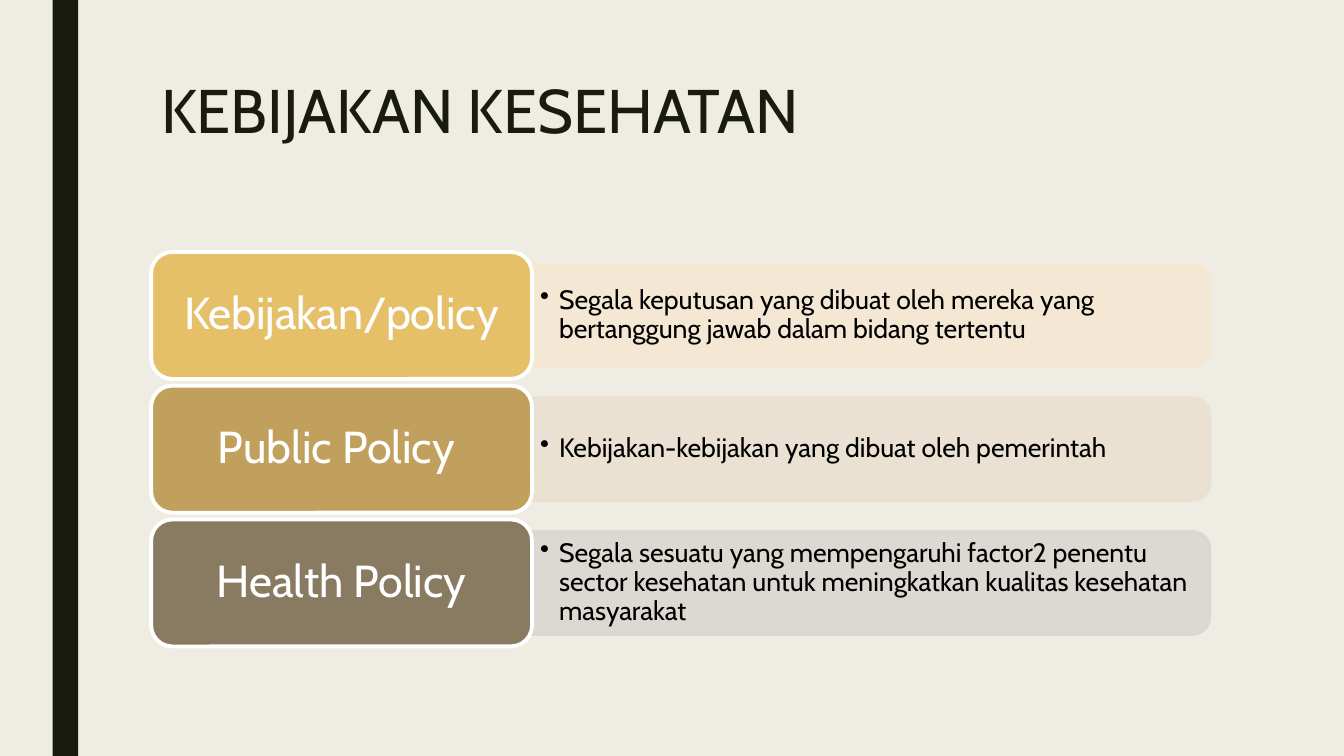
import pptx
import pptx.util
import pptx.dml.color
import pptx.enum.shapes
import pptx.enum.text
import pptx.oxml.ns
from lxml import etree
from pptx.util import Cm

TITLE = "KEBIJAKAN KESEHATAN"
# label, explanation, label colour, bar colour
POLICIES = [
    ("Kebijakan/policy",
     "Segala keputusan yang dibuat oleh mereka yang bertanggung jawab dalam bidang tertentu",
     "E6C069", "F5E8D4"),
    ("Public Policy ",
     "Kebijakan-kebijakan yang dibuat oleh pemerintah",
     "C0A05C", "EAE0D1"),
    ("Health Policy",
     "Segala sesuatu yang mempengaruhi factor2 penentu sector kesehatan "
     "untuk meningkatkan kualitas kesehatan masyarakat",
     "897B61", "DAD7D2"),
]
FONT = "Cabin"
DARK, PAPER, WHITE, BLACK = "191B0E", "EFEDE3", "FFFFFF", "000000"

LEFT, TOP, PITCH = Cm(3.81), Cm(6.35), Cm(3.37)
LABEL_WIDTH, LABEL_HEIGHT = Cm(9.6), Cm(3.2)
BAR_LENGTH, BAR_DEPTH = Cm(17.07), Cm(2.57)
NOTE_WIDTH, NOTE_HEIGHT = Cm(16.94), Cm(2.31)

SHAPES = pptx.enum.shapes.MSO_SHAPE
ALIGN = pptx.enum.text.PP_ALIGN
ANCHOR = pptx.enum.text.MSO_ANCHOR


def colour(code):
    return pptx.dml.color.RGBColor.from_string(code)


def add_child(parent, tag, **attributes):
    child = etree.SubElement(parent, pptx.oxml.ns.qn(tag))
    for name, value in attributes.items():
        child.set(name, value)


def write(shape, text, size, ink, align=ALIGN.LEFT, anchor=ANCHOR.MIDDLE,
          inset=(Cm(0.25), Cm(0.13)), bullet=False):
    frame = shape.text_frame
    frame.word_wrap = True
    frame.auto_size = pptx.enum.text.MSO_AUTO_SIZE.NONE
    frame.vertical_anchor = anchor
    frame.margin_left = frame.margin_right = inset[0]
    frame.margin_top = frame.margin_bottom = inset[1]
    para = frame.paragraphs[0]
    para.alignment = align
    para.line_spacing = 0.9
    span = para.add_run()
    span.text = text
    span.font.name = FONT
    span.font.size = pptx.util.Pt(size)
    span.font.color.rgb = colour(ink)
    if bullet:
        properties = para._p.get_or_add_pPr()
        properties.set("marL", str(Cm(0.48)))
        properties.set("indent", str(-Cm(0.48)))
        add_child(properties, "a:buChar", char="•")


def add_block(page, kind, box, fill, line=None, opacity=None):
    """Add a filled shape; box is left, top, width, height, opacity a percentage."""
    shape = page.shapes.add_shape(kind, *box)
    shape.shadow.inherit = False
    shape.fill.solid()
    shape.fill.fore_color.rgb = colour(fill)
    if line:
        shape.line.color.rgb = colour(line)
        shape.line.width = pptx.util.Pt(2.75)
    else:
        shape.line.fill.background()
    if opacity:
        for shade in shape._element.spPr.iter(pptx.oxml.ns.qn("a:srgbClr")):
            add_child(shade, "a:alpha", val=str(opacity * 1000))
    return shape


def add_policy(page, top, label, note, label_fill, bar_fill):
    middle = top + LABEL_HEIGHT // 2
    right = LEFT + LABEL_WIDTH
    # The bar stands upright before its quarter turn, around the same centre.
    bar = add_block(page, SHAPES.ROUND_2_SAME_RECTANGLE,
                    (right + (BAR_LENGTH - BAR_DEPTH) // 2, middle - BAR_LENGTH // 2,
                     BAR_DEPTH, BAR_LENGTH),
                    bar_fill, line=bar_fill, opacity=90)
    bar.rotation = 90
    box = page.shapes.add_textbox(right, middle - NOTE_HEIGHT // 2, NOTE_WIDTH, NOTE_HEIGHT)
    write(box, note, 19, BLACK, inset=(Cm(0.2), Cm(0.1)), bullet=True)
    tag = add_block(page, SHAPES.ROUNDED_RECTANGLE,
                    (LEFT, top, LABEL_WIDTH, LABEL_HEIGHT), label_fill, line=WHITE)
    write(tag, label, 32, WHITE, align=ALIGN.CENTER, inset=(Cm(0.33), Cm(0.17)))


def main():
    deck = pptx.Presentation()
    deck.slide_width, deck.slide_height = Cm(33.87), Cm(19.05)
    page = deck.slides.add_slide(deck.slide_layouts[5])
    page.background.fill.solid()
    page.background.fill.fore_color.rgb = colour(PAPER)

    add_block(page, SHAPES.RECTANGLE, (Cm(1.33), 0, Cm(0.64), deck.slide_height), DARK)
    title = page.shapes.title
    title.left, title.top, title.width, title.height = LEFT, Cm(1.9), Cm(26.67), Cm(4.11)
    write(title, TITLE, 44, DARK, anchor=ANCHOR.TOP)
    for row, policy in enumerate(POLICIES):
        add_policy(page, TOP + row * PITCH, *policy)
    deck.save("out.pptx")


if __name__ == "__main__":
    main()
